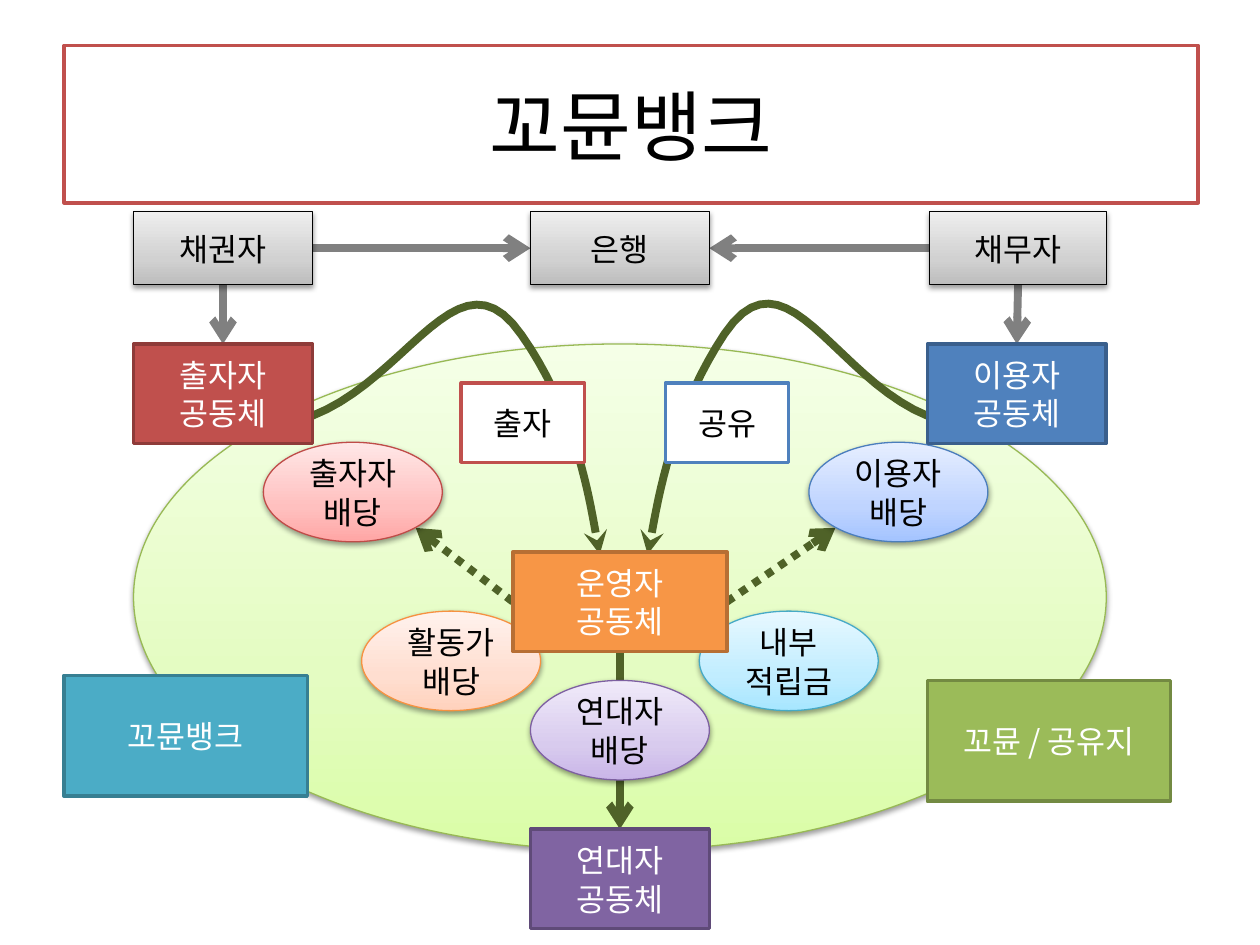
"""Builds the commune bank diagram: a bank model above a circle of communities."""
from copy import deepcopy
from lxml import etree
from pptx import Presentation, util as u
from pptx.dml.color import RGBColor
from pptx.enum import dml, shapes, text
from pptx.oxml.ns import qn

FONT = "Noto Sans CJK KR"
RECT, OVAL = shapes.MSO_SHAPE.RECTANGLE, shapes.MSO_SHAPE.OVAL
BLACK, WHITE, GREY, OLIVE = "000000", "FFFFFF", "808080", "4F6228"
SILVER = ("BDBDBD", "D1D1D1", "EEEEEE")
color = RGBColor.from_string

deck = Presentation()
deck.slide_width, deck.slide_height = u.Inches(10), u.Inches(7.5)
slide = deck.slides.add_slide(deck.slide_layouts[6])


def add_block(kind, place, fill, edge, label="", ink=BLACK, size=18):
    """Add a labelled shape; three fill colours make a shaded shape with a shadow."""
    block = slide.shapes.add_shape(kind, *map(u.Inches, place))
    block.shadow.inherit = False
    props = block._element.spPr
    block.line.color.rgb = color(edge)
    if isinstance(fill, tuple):
        block.line.width = u.Pt(0.75)
        block.fill.gradient()
        block.fill.gradient_angle = 90
        first = props.find(".//" + qn("a:gs"))
        first.addnext(deepcopy(first))
        for stop, position, shade in zip(block.fill.gradient_stops, (0, 0.35, 1), fill):
            stop.position = position
            stop.color.rgb = color(shade)
        shadow = etree.SubElement(props.find(qn("a:effectLst")), qn("a:outerShdw"),
                                  blurRad="40000", dist="20000", dir="5400000", rotWithShape="0")
        tint = etree.SubElement(shadow, qn("a:srgbClr"), val=BLACK)
        etree.SubElement(tint, qn("a:alpha"), val="38000")
    else:
        block.line.width = u.Pt(2)
        block.fill.solid()
        block.fill.fore_color.rgb = color(fill)
    if label:
        frame = block.text_frame
        frame.word_wrap = True
        frame.vertical_anchor = text.MSO_ANCHOR.MIDDLE
        frame.text = label
        for paragraph in frame.paragraphs:
            paragraph.alignment = text.PP_ALIGN.CENTER
            paragraph.line_spacing = u.Pt(round(size * 1.22))
            paragraph.font.name = FONT
            paragraph.font.size = u.Pt(size)
            paragraph.font.color.rgb = color(ink)
            etree.SubElement(paragraph._p.pPr.find(qn("a:defRPr")), qn("a:ea"), typeface=FONT)
    return block


def style_arrow(arrow, ink, head, dash=None):
    """Give a connector or curve its thick line and arrowhead."""
    arrow.line.color.rgb = color(ink)
    arrow.line.width = u.Pt(4.5)
    if dash:
        arrow.line.dash_style = dash
    etree.SubElement(arrow._element.spPr.find(qn("a:ln")), qn("a:tailEnd"), type=head)


add_block(OVAL, (1.06, 2.73, 7.72, 4.02), ("DAFDA7", "E4FCC2", "F5FFE7"), "98B955")

DOTS = dml.MSO_LINE.ROUND_DOT
INVESTORS, USERS = "출자자\n공동체", "이용자\n공동체"
OPERATORS, ALLIES = "운영자\n공동체", "연대자\n공동체"
links = [
    ((4.07, 4.77), (3.3, 4.19), OLIVE, DOTS, (OPERATORS, 1), None),
    ((5.77, 4.77), (6.63, 4.19), OLIVE, DOTS, (OPERATORS, 3), None),
    ((4.92, 4.77), (4.92, 6.58), OLIVE, None, None, (ALLIES, 0)),
    ((1.77, 2.25), (1.77, 2.73), GREY, None, ("채권자", 2), (INVESTORS, 0)),
    ((8.08, 2.25), (8.07, 2.73), GREY, None, ("채무자", 2), (USERS, 0)),
    ((2.48, 1.97), (4.21, 1.97), GREY, None, ("채권자", 3), ("은행", 1)),
    ((7.38, 1.97), (5.63, 1.97), GREY, None, ("채무자", 1), ("은행", 3)),
]
arrows = []
for start, end, ink, dash, _, _ in links:
    arrow = slide.shapes.add_connector(shapes.MSO_CONNECTOR.STRAIGHT, *map(u.Inches, start + end))
    style_arrow(arrow, ink, "arrow", dash)
    etree.SubElement(arrow._element.spPr, qn("a:effectLst"))
    arrows.append(arrow)

STEPS = 20
flows = [
    [(7.36, 3.3), (6.62, 3), (6.23, 1.94), (5.75, 2.65), (5.28, 3.36), (5.2, 4.13), (5.14, 4.4)],
    [(2.48, 3.3), (3.25, 3), (3.65, 1.95), (4.14, 2.66), (4.63, 3.36), (4.7, 4.13), (4.76, 4.4)],
]
for flow in flows:
    points = []
    for bend in (flow[:4], flow[3:]):
        for step in range(1, STEPS + 1):
            t = step / STEPS
            weights = ((1 - t) ** 3, 3 * t * (1 - t) ** 2, 3 * t * t * (1 - t), t ** 3)
            points.append([u.Inches(sum(w * c for w, c in zip(weights, axis)))
                           for axis in zip(*bend)])
    builder = slide.shapes.build_freeform(*map(u.Inches, flow[0]))
    builder.add_line_segments(points, close=False)
    curve = builder.convert_to_shape()
    curve.fill.background()
    curve.shadow.inherit = False
    style_arrow(curve, OLIVE, "stealth")

W, H = 1.42, 0.79
blocks = {}
for kind, place, fill, edge, label, ink in [
    (RECT, (0.51, 5.36, 1.93, 0.96), "4BACC6", "377F92", "꼬뮨뱅크", WHITE),
    (OVAL, (2.09, 3.51, W, H), ("FFA6A5", "FFC0BF", "FFE7E7"), "BF4C48", "출자자\n배당", BLACK),
    (OVAL, (6.42, 3.51, W, H), ("A4C4FF", "BFD4FF", "E6EEFF"), "4B7EBC", "이용자\n배당", BLACK),
    (RECT, (5.28, 3.04, 0.98, 0.63), WHITE, "4F81BD", "공유", BLACK),
    (RECT, (3.66, 3.04, 0.98, 0.63), WHITE, "C0504D", "출자", BLACK),
    (OVAL, (5.55, 4.85, W, H), ("A7E6FF", "C1EDFF", "E7F8FF"), "46AAC5", "내부\n적립금", BLACK),
    (RECT, (4.21, 6.58, W, H), "8064A2", "5F4A78", ALLIES, WHITE),
    (OVAL, (4.21, 5.4, W, H), ("C9B5E8", "D8CBEE", "F0EAF9"), "7D60A0", "연대자\n배당", BLACK),
    (OVAL, (2.87, 4.85, W, H), ("FFD2BD", "FFDED0", "FFF2ED"), "F69240", "활동가배당", BLACK),
    (RECT, (7.36, 2.73, W, H), "4F81BD", "3A5F8C", USERS, WHITE),
    (RECT, (1.06, 2.73, W, H), "C0504D", "8E3B39", INVESTORS, WHITE),
    (RECT, (7.36, 5.4, 1.93, 0.96), "9BBB59", "738A42", "꼬뮨 / 공유지", WHITE),
    (RECT, (4.07, 4.38, 1.7, H), "F79646", "B76F34", OPERATORS, WHITE),
    (RECT, (4.21, 1.68, W, 0.58), SILVER, BLACK, "은행", BLACK),
    (RECT, (1.06, 1.68, W, 0.58), SILVER, BLACK, "채권자", BLACK),
    (RECT, (7.38, 1.68, 1.4, 0.58), SILVER, BLACK, "채무자", BLACK),
]:
    blocks[label] = add_block(kind, place, fill, edge, label, ink)
add_block(RECT, (0.51, 0.36, 9, 1.25), WHITE, "C0504D", "꼬뮨뱅크", size=44)

for arrow, (*_, source, target) in zip(arrows, links):
    if source:
        arrow.begin_connect(blocks[source[0]], source[1])
    if target:
        arrow.end_connect(blocks[target[0]], target[1])

deck.save("out.pptx")
